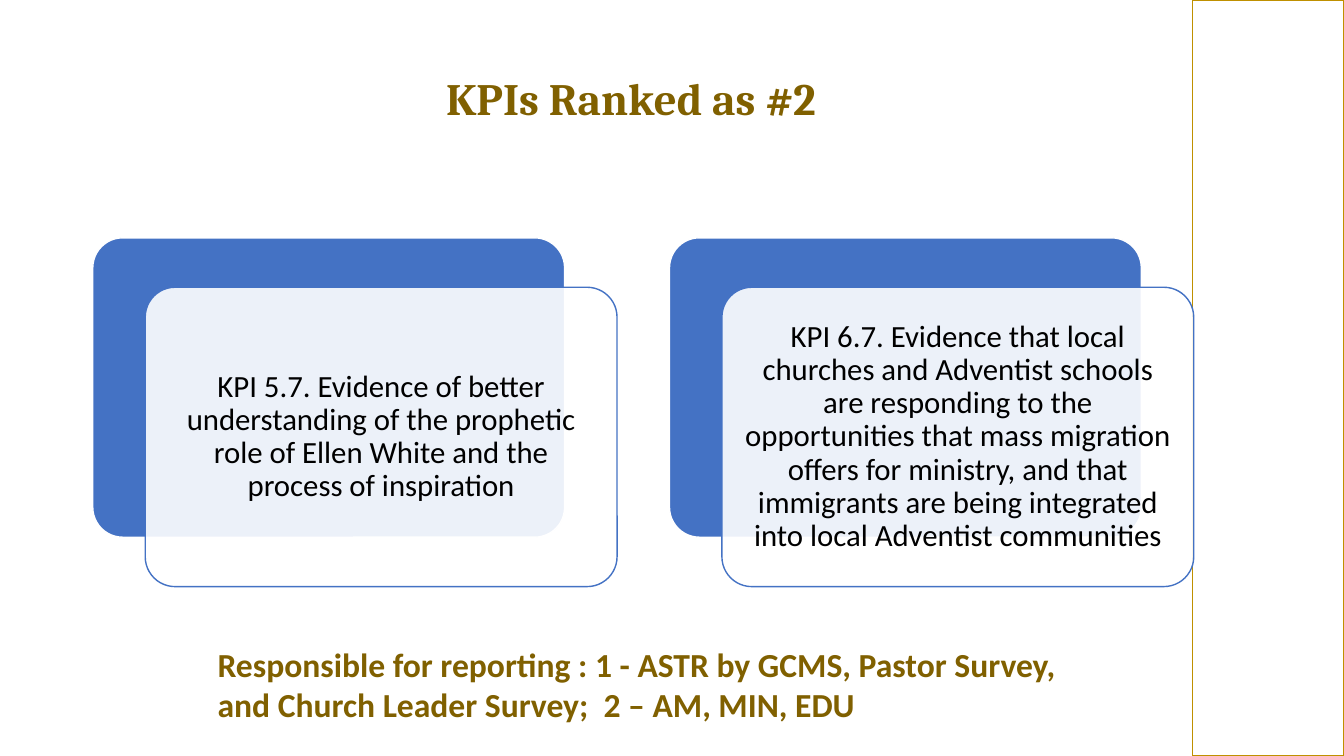
from lxml.etree import SubElement
from pptx import Presentation
from pptx.dml.color import RGBColor
from pptx.enum.shapes import MSO_SHAPE
from pptx.enum.text import MSO_ANCHOR, MSO_AUTO_SIZE, PP_ALIGN
from pptx.oxml.ns import qn
from pptx.util import Inches, Pt

TITLE = "KPIs Ranked as #2"
CARDS = [
    "KPI 5.7. Evidence of better understanding of the prophetic role of "
    "Ellen White and the process of inspiration",
    "KPI 6.7. Evidence that local churches and Adventist schools are "
    "responding to the opportunities that mass migration offers for ministry, "
    "and that immigrants are being integrated into local Adventist communities",
]
NOTES = ["Responsible for reporting : 1 - ASTR by GCMS, Pastor Survey,",
         "and Church Leader Survey;  2 – AM, MIN, EDU"]

WIDE, HIGH = 13.33, 7.5
BAND = 1.5
LEFT, TOP, STEP = 0.92, 2.36, 5.72
CARD_W, CARD_H = 4.68, 2.97
SHIFT_X, SHIFT_Y = 0.52, 0.49
BLUE, GOLD, BROWN, WHITE, BLACK = "4472C4", "BF9000", "806000", "FFFFFF", "000000"
HEAD = {"name": "Cambria", "size": Pt(32), "bold": True, "italic": False}
BODY = {"name": "Calibri", "size": Pt(22), "bold": False}
NOTE = {"name": "Calibri", "size": Pt(24), "bold": True}


def paint(color, code):
    color.rgb = RGBColor.from_string(code)


def place(item, *box):
    item.left, item.top, item.width, item.height = map(Inches, box)


def write(frame, lines, font, code, para, **form):
    """Fill a text frame, one paragraph a line."""
    for key, value in form.items():
        setattr(frame, key, value)
    frame.text = "\n".join(lines)
    for par in frame.paragraphs:
        for key, value in para.items():
            setattr(par, key, value)
        for run in par.runs:
            for key, value in font.items():
                setattr(run.font, key, value)
            paint(run.font.color, code)


def draw(kind, box, line, fill=None, alpha=None):
    shape = slide.shapes.add_shape(kind, *map(Inches, box))
    shape.shadow.inherit = False
    shape.line.width = Pt(1)
    paint(shape.line.color, line)
    if fill is None:
        shape.fill.background()
    else:
        shape.fill.solid()
        paint(shape.fill.fore_color, fill)
    if alpha:
        tint = shape.fill._xPr.find(qn("a:solidFill"))[0]
        SubElement(tint, qn("a:alpha"), val=str(alpha * 1000))
    if kind == MSO_SHAPE.ROUNDED_RECTANGLE:
        shape.adjustments[0] = 0.1
    return shape


deck = Presentation()
deck.slide_width, deck.slide_height = Inches(WIDE), Inches(HIGH)
slide = deck.slides.add_slide(deck.slide_layouts[5])

centre = {"alignment": PP_ALIGN.CENTER, "line_spacing": 0.9}
title = slide.shapes.title
place(title, 0.68, 0.4, 11.16, 1.45)
write(title.text_frame, [TITLE], HEAD, BROWN, centre,
      vertical_anchor=MSO_ANCHOR.MIDDLE, auto_size=MSO_AUTO_SIZE.NONE,
      margin_bottom=Inches(0.3))

draw(MSO_SHAPE.RECTANGLE, (WIDE - BAND, 0, BAND, HIGH), GOLD)

pad = dict.fromkeys(("margin_left", "margin_right", "margin_top",
                     "margin_bottom"), Inches(0.13))
for col, text in enumerate(CARDS):
    x = LEFT + col * STEP
    draw(MSO_SHAPE.ROUNDED_RECTANGLE, (x, TOP, CARD_W, CARD_H), WHITE, BLUE)
    front = draw(MSO_SHAPE.ROUNDED_RECTANGLE,
                 (x + SHIFT_X, TOP + SHIFT_Y, CARD_W, CARD_H), BLUE, WHITE, 90)
    write(front.text_frame, [text], BODY, BLACK, centre, word_wrap=True,
          vertical_anchor=MSO_ANCHOR.MIDDLE, **pad)

note = slide.shapes.add_textbox(*map(Inches, (2.06, 6.34, 8.67, 0.91)))
write(note.text_frame, NOTES, NOTE, BROWN, {"alignment": PP_ALIGN.LEFT},
      word_wrap=False, auto_size=MSO_AUTO_SIZE.SHAPE_TO_FIT_TEXT)

deck.save("out.pptx")
